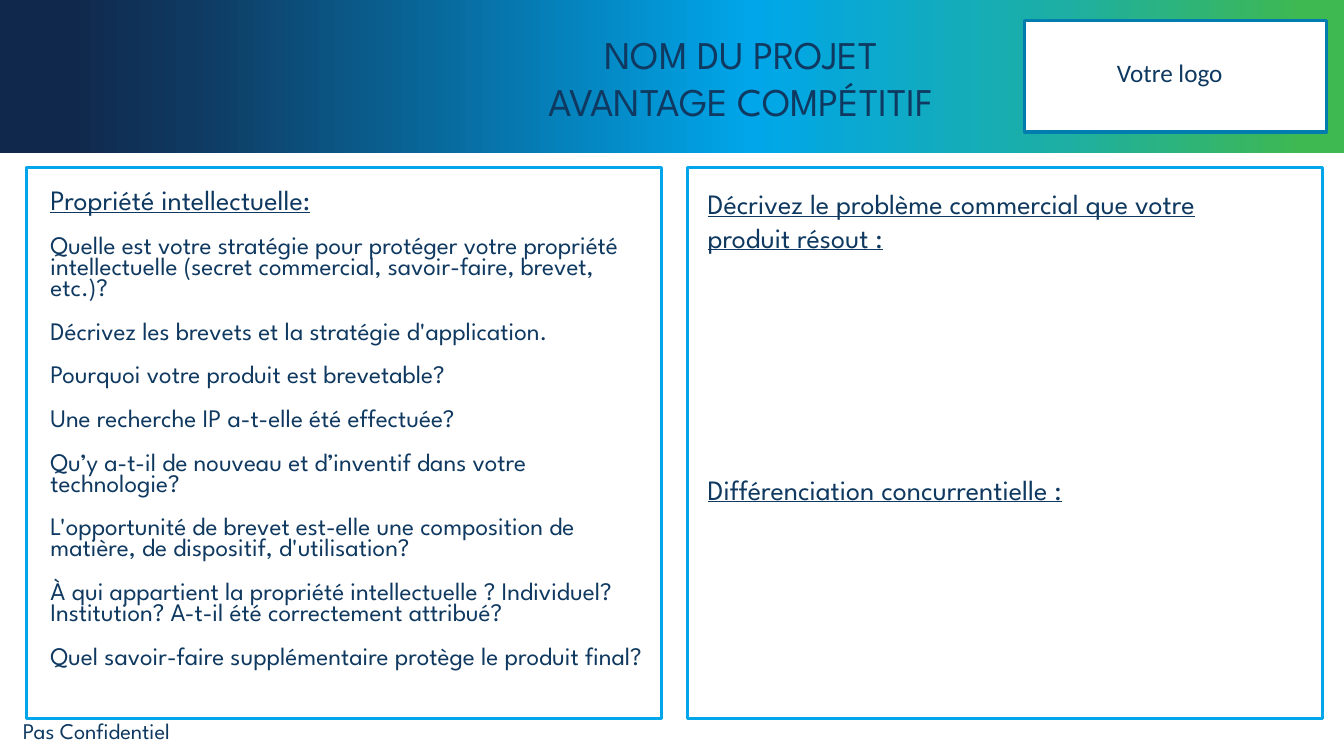
from dataclasses import dataclass

from lxml.etree import SubElement
from pptx import Presentation
from pptx.dml.color import RGBColor
from pptx.enum.shapes import MSO_SHAPE
from pptx.enum.text import MSO_ANCHOR, MSO_AUTO_SIZE, PP_ALIGN
from pptx.oxml.ns import qn
from pptx.shapes.autoshape import Shape
from pptx.slide import Slide
from pptx.util import Inches, Pt

NAVY = RGBColor(0x0F, 0x39, 0x60)
SKY = RGBColor(0x00, 0xA6, 0xE9)
TEAL = RGBColor(0x00, 0x7C, 0xAF)
WHITE = RGBColor(0xFF, 0xFF, 0xFF)
BANNER_STOPS = (
    (5, RGBColor(0x10, 0x28, 0x4C)),
    (14, NAVY),
    (56, SKY),
    (79, RGBColor(0x1D, 0xAF, 0xA4)),
    (97, RGBColor(0x3E, 0xB8, 0x51)),
)
HEADING_FONT = "League Spartan"


@dataclass(frozen=True)
class Area:
    left: float
    top: float
    width: float
    height: float

    def lengths(self) -> tuple[int, int, int, int]:
        return (Inches(self.left), Inches(self.top),
                Inches(self.width), Inches(self.height))


@dataclass(frozen=True)
class Line:
    text: str
    size: float
    underline: bool = False
    align: PP_ALIGN = PP_ALIGN.LEFT
    font: str = HEADING_FONT
    before: float = 0
    after: float = 0
    spacing: float = 1.0


def write_lines(box: Shape, lines: list[Line], wrap: bool = True,
                anchor: MSO_ANCHOR = MSO_ANCHOR.TOP) -> None:
    frame = box.text_frame
    frame.word_wrap = wrap
    frame.auto_size = MSO_AUTO_SIZE.NONE
    frame.vertical_anchor = anchor
    for index, line in enumerate(lines):
        para = frame.paragraphs[0] if index == 0 else frame.add_paragraph()
        properties = para._p.get_or_add_pPr()
        properties.set("marL", "0")
        properties.set("indent", "0")
        SubElement(properties, qn("a:buNone"))
        para.alignment = line.align
        para.line_spacing = line.spacing
        para.space_before = Pt(line.before if index else 0)
        para.space_after = Pt(line.after)
        span = para.add_run()
        span.text = line.text
        span.font.name = line.font
        span.font.size = Pt(line.size)
        span.font.underline = line.underline
        span.font.color.rgb = NAVY


def place(box: Shape, area: Area) -> None:
    box.left, box.top, box.width, box.height = area.lengths()


def add_rectangle(page: Slide, area: Area, fill: RGBColor | None = None,
                  outline: RGBColor | None = None) -> Shape:
    box = page.shapes.add_shape(MSO_SHAPE.RECTANGLE, *area.lengths())
    box.shadow.inherit = False
    if fill is None:
        box.fill.background()
    else:
        box.fill.solid()
        box.fill.fore_color.rgb = fill
    if outline is None:
        box.line.fill.background()
    else:
        box.line.color.rgb = outline
        box.line.width = Pt(2.25)
    return box


def add_banner(page: Slide) -> None:
    banner = add_rectangle(page, Area(0, 0, 13.33, 1.52))
    banner.fill.gradient()
    banner.fill.gradient_angle = 0
    stops = banner._element.spPr.find(qn("a:gradFill")).find(qn("a:gsLst"))
    for stop in list(stops):
        stops.remove(stop)
    for percent, color in BANNER_STOPS:
        stop = SubElement(stops, qn("a:gs"), pos=str(percent * 1000))
        SubElement(stop, qn("a:srgbClr"), val=str(color))
    # The banner lies behind the title
    page.shapes._spTree.insert(2, banner._element)


def add_text(page: Slide, area: Area, lines: list[Line]) -> None:
    write_lines(page.shapes.add_textbox(*area.lengths()), lines)


QUESTIONS = (
    "Quelle est votre stratégie pour protéger votre propriété intellectuelle "
    "(secret commercial, savoir-faire, brevet, etc.)?",
    "Décrivez les brevets et la stratégie d'application.",
    "Pourquoi votre produit est brevetable?",
    "Une recherche IP a-t-elle été effectuée?",
    "Qu’y a-t-il de nouveau et d’inventif dans votre technologie?",
    "L'opportunité de brevet est-elle une composition de matière, "
    "de dispositif, d'utilisation?",
    "À qui appartient la propriété intellectuelle ? Individuel? "
    "Institution? A-t-il été correctement attribué?",
    "Quel savoir-faire supplémentaire protège le produit final?",
)


def main() -> None:
    deck = Presentation()
    deck.slide_width, deck.slide_height = Inches(13.33), Inches(7.5)
    page = deck.slides.add_slide(deck.slide_layouts[1])
    title, body = page.placeholders[0], page.placeholders[1]

    # Banner and title
    add_banner(page)
    place(title, Area(5.02, 0.25, 4.66, 1.04))
    write_lines(title, [Line(text, 28, align=PP_ALIGN.CENTER)
                        for text in ("NOM DU PROJET", "AVANTAGE COMPÉTITIF")])

    # Logo frame
    add_rectangle(page, Area(10.16, 0.2, 3, 1.11), WHITE, TEAL)
    label = add_rectangle(page, Area(10.98, 0.52, 1.26, 0.4), WHITE)
    write_lines(label, [Line("Votre logo", 18, font="Calibri")], wrap=False)

    # Panel frames
    for left in (0.26, 6.82):
        add_rectangle(page, Area(left, 1.66, 6.3, 5.47), outline=SKY)

    # Intellectual property questions
    place(body, Area(0.4, 1.85, 6.11, 4.85))
    heading = Line("Propriété intellectuelle:", 20, True, after=6, spacing=0.7)
    write_lines(body, [heading] + [Line(text, 18, before=10, after=6, spacing=0.7)
                                   for text in QUESTIONS])

    # Market problem and differentiation
    add_text(page, Area(6.92, 1.8, 5.89, 4.09), [
        Line("Décrivez le problème commercial que votre produit résout :",
             20, True, after=6),
        Line("Différenciation concurrentielle :", 20, True, before=150, after=6),
    ])

    # Confidentiality note
    add_text(page, Area(0.13, 7.07, 2.06, 0.37), [Line("Pas Confidentiel", 16)])

    deck.save("out.pptx")


if __name__ == "__main__":
    main()
